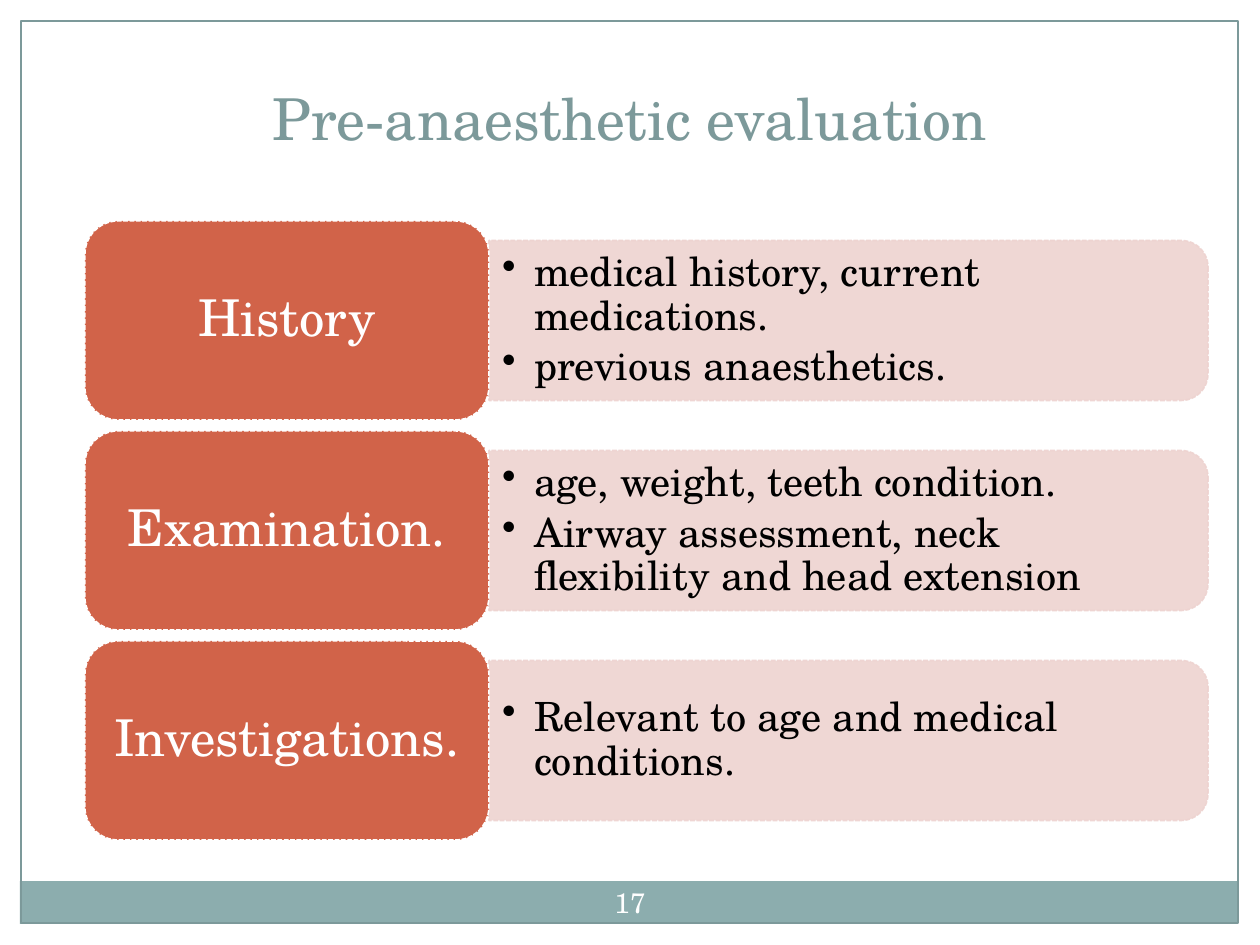
from dataclasses import dataclass
from typing import Optional

from lxml.etree import SubElement
from pptx import Presentation
from pptx.dml.color import RGBColor
from pptx.enum.dml import MSO_LINE
from pptx.enum.shapes import MSO_SHAPE
from pptx.enum.text import MSO_ANCHOR, PP_ALIGN
from pptx.oxml.ns import qn
from pptx.util import Emu, Pt

PX_PER_INCH = 126
FONT = "TeX Gyre Schola"
WHITE, BLACK, TEAL, BAND = "FFFFFF", "000000", "7C999A", "8CADAE"
LABEL_FILL, DETAIL_FILL = "D16349", "EED3D0"

LABEL_LEFT, LABEL_WIDTH, LABEL_HEIGHT = 85, 404, 199
DETAIL_LEFT, DETAIL_WIDTH, DETAIL_HEIGHT = 489, 719, 160
BULLETS_WIDTH, BULLETS_HEIGHT = 711, 144
FIRST_ROW_TOP, ROW_PITCH = 221, 210


@dataclass(frozen=True)
class Box:
    left: int
    top: int
    width: int
    height: int


@dataclass(frozen=True)
class Stage:
    label: str
    details: tuple[str, ...]


STAGES = (
    Stage("History", ("medical history, current medications.", "previous anaesthetics.")),
    Stage("Examination.", ("age, weight, teeth condition.",
                           "Airway assessment, neck flexibility and head extension")),
    Stage("Investigations.", ("Relevant to age and medical conditions.",)),
)


def px(value: float) -> Emu:
    return Emu(round(value * 914400 / PX_PER_INCH))


def rgb(value: str) -> RGBColor:
    return RGBColor.from_string(value)


def place(box: Box) -> tuple[Emu, Emu, Emu, Emu]:
    return px(box.left), px(box.top), px(box.width), px(box.height)


def set_alpha(fill_parent, percent: int) -> None:
    for color in fill_parent.findall(f"{qn('a:solidFill')}/{qn('a:srgbClr')}"):
        SubElement(color, qn("a:alpha"), val=str(percent * 1000))


def add_panel(slide, preset: MSO_SHAPE, box: Box, fill: Optional[str] = None,
              line: Optional[str] = None, line_width: float = 0.75,
              dashed: bool = False, opacity: int = 100, rotation: int = 0):
    panel = slide.shapes.add_shape(preset, *place(box))
    panel.shadow.inherit = False
    panel.rotation = rotation
    if fill:
        panel.fill.solid()
        panel.fill.fore_color.rgb = rgb(fill)
    else:
        panel.fill.background()
    if line:
        panel.line.color.rgb = rgb(line)
        panel.line.width = Pt(line_width)
        if dashed:
            panel.line.dash_style = MSO_LINE.SQUARE_DOT
    else:
        panel.line.fill.background()
    if opacity < 100:
        properties = panel.fill._xPr
        set_alpha(properties, opacity)
        set_alpha(properties.find(qn("a:ln")), opacity)
    return panel


def write(holder, *lines: str, size: int, color: str, align: PP_ALIGN = PP_ALIGN.CENTER,
          margins: tuple[int, int] = (13, 6), spacing: float = 1.0,
          after: float = 0, bulleted: bool = False) -> None:
    frame = holder.text_frame
    frame.word_wrap = True
    frame.vertical_anchor = MSO_ANCHOR.MIDDLE
    frame.margin_left = frame.margin_right = px(margins[0])
    frame.margin_top = frame.margin_bottom = px(margins[1])
    for index, line in enumerate(lines):
        paragraph = frame.add_paragraph() if index else frame.paragraphs[0]
        paragraph.alignment = align
        paragraph.line_spacing = spacing
        paragraph.space_after = Pt(after)
        run = paragraph.add_run()
        run.text = line
        run.font.name = FONT
        run.font.size = Pt(size)
        run.font.color.rgb = rgb(color)
        if bulleted:
            properties = paragraph._p.get_or_add_pPr()
            properties.set("marL", str(px(32)))
            properties.set("indent", str(px(-32)))
            SubElement(properties, qn("a:buChar"), char="•")


def add_text(slide, box: Box, *lines: str, **text_format) -> None:
    write(slide.shapes.add_textbox(*place(box)), *lines, **text_format)


def add_stage(slide, stage: Stage, top: int) -> None:
    middle = top + LABEL_HEIGHT / 2
    upright = Box(DETAIL_LEFT + (DETAIL_WIDTH - DETAIL_HEIGHT) / 2,
                  middle - DETAIL_WIDTH / 2, DETAIL_HEIGHT, DETAIL_WIDTH)
    add_panel(slide, MSO_SHAPE.ROUND_2_SAME_RECTANGLE, upright, DETAIL_FILL, DETAIL_FILL,
              line_width=0.9, dashed=True, opacity=90, rotation=90)
    bullets = Box(DETAIL_LEFT, middle - BULLETS_HEIGHT / 2, BULLETS_WIDTH, BULLETS_HEIGHT)
    add_text(slide, bullets, *stage.details, size=23, color=BLACK, align=PP_ALIGN.LEFT,
             spacing=0.9, after=4, bulleted=True)
    label = add_panel(slide, MSO_SHAPE.ROUNDED_RECTANGLE,
                      Box(LABEL_LEFT, top, LABEL_WIDTH, LABEL_HEIGHT), LABEL_FILL, WHITE,
                      line_width=0.9, dashed=True)
    write(label, stage.label, size=29, color=WHITE, margins=(15, 8), spacing=0.9)


def main() -> None:
    """Build the pre-anaesthetic evaluation slide."""
    deck = Presentation()
    deck.slide_width, deck.slide_height = px(1260), px(945)
    slide = deck.slides.add_slide(deck.slide_layouts[6])
    add_panel(slide, MSO_SHAPE.RECTANGLE, Box(20, 881, 1217, 43), fill=BAND)
    add_panel(slide, MSO_SHAPE.RECTANGLE, Box(21, 21, 1217, 902), line=TEAL)
    add_text(slide, Box(588, 872, 84, 60), "17", size=16, color=WHITE, margins=(6, 6))
    add_text(slide, Box(63, 38, 1134, 158), "Pre-anaesthetic evaluation", size=33, color=TEAL)
    for row, stage in enumerate(STAGES):
        add_stage(slide, stage, FIRST_ROW_TOP + row * ROW_PITCH)
    deck.save("out.pptx")


if __name__ == "__main__":
    main()
